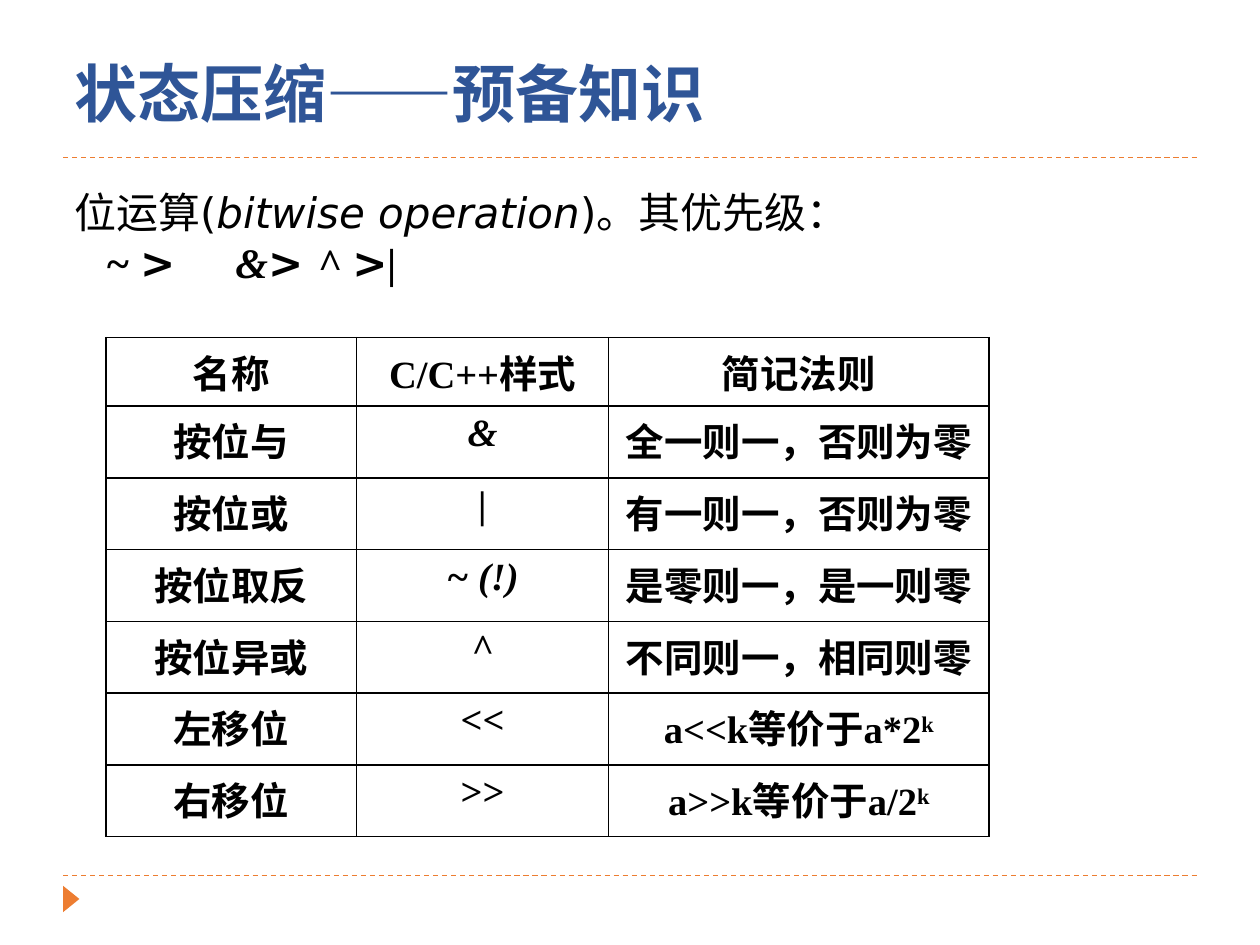
from lxml.etree import SubElement
from pptx import Presentation
from pptx.dml.color import RGBColor
from pptx.enum.dml import MSO_LINE
from pptx.enum.shapes import MSO_CONNECTOR, MSO_SHAPE
from pptx.enum.text import MSO_ANCHOR, PP_ALIGN
from pptx.oxml.ns import qn
from pptx.util import Inches, Pt

BLACK, BLUE, ORANGE = "000000", "2F5597", "ED7D31"
SERIF, SANS = "Times New Roman", "DejaVu Sans"
COLUMN_WIDTHS = (1.99, 2, 3.02)
HEADER_HEIGHT, ROW_HEIGHT = 0.54, 0.57
ROWS = [
    ("名称", "C/C++样式", "简记法则"),
    ("按位与", "&", "全一则一，否则为零"),
    ("按位或", "|", "有一则一，否则为零"),
    ("按位取反", "~ (!)", "是零则一，是一则零"),
    ("按位异或", "^", "不同则一，相同则零"),
    ("左移位", "<<", "a<<k等价于a*2^k"),
    ("右移位", ">>", "a>>k等价于a/2^k"),
]
ITALIC_SYMBOLS = {"&", "|", "~ (!)", "^"}


def color(value):
    """Turn a hex string into a colour."""
    return RGBColor.from_string(value)


def add_span(para, text, size, name, shade=BLACK, bold=False, italic=False):
    """Add one formatted run to a paragraph."""
    span = para.add_run()
    span.text = text
    font = span.font
    font.size, font.name, font.bold, font.italic = Pt(size), name, bold, italic
    font.color.rgb = color(shade)
    return span


def add_rule(page, left, top, width):
    """Draw a dashed horizontal rule."""
    rule = page.shapes.add_connector(
        MSO_CONNECTOR.STRAIGHT, Inches(left), Inches(top), Inches(left + width), Inches(top))
    rule.line.color.rgb = color(ORANGE)
    rule.line.width = Pt(0.75)
    rule.line.dash_style = MSO_LINE.DASH
    SubElement(rule._element.spPr, qn("a:effectLst"))


def add_marker(page, left, top, width, height):
    """Draw the triangle that points right in the footer."""
    marker = page.shapes.add_shape(
        MSO_SHAPE.ISOSCELES_TRIANGLE, Inches(left), Inches(top), Inches(width), Inches(height))
    marker.rotation = 90
    marker.shadow.inherit = False
    marker.fill.solid()
    marker.fill.fore_color.rgb = color(ORANGE)
    marker.line.fill.background()


def fill_title(page, left, top, width, height):
    """Place and fill the title placeholder."""
    box = page.shapes.title
    box.left, box.top, box.width, box.height = map(Inches, (left, top, width, height))
    box.text_frame.vertical_anchor = MSO_ANCHOR.BOTTOM
    para = box.text_frame.paragraphs[0]
    para.alignment = PP_ALIGN.LEFT
    para.line_spacing = 0.9
    add_span(para, "状态压缩——预备知识", 36, "Calibri", BLUE, bold=True)


def add_precedence(page, left, top, width, height):
    """Add the introduction and the order of the operators."""
    box = page.shapes.add_textbox(Inches(left), Inches(top), Inches(width), Inches(height))
    frame = box.text_frame
    frame.word_wrap = True
    intro = frame.paragraphs[0]
    add_span(intro, "位运算(", 24, SANS)
    add_span(intro, "bitwise operation", 24, SANS, italic=True)
    add_span(intro, ")。其优先级：", 24, SANS)

    order = frame.add_paragraph()
    properties = order._p.get_or_add_pPr()
    properties.set("marL", str(Inches(0.25)))
    tabs = SubElement(properties, qn("a:tabLst"))
    SubElement(tabs, qn("a:tab"), pos=str(Inches(1.03)), algn="l")
    for text in ("~ ", ">\t", "&", "> ", "^ ", ">", "|"):
        is_relation = text.startswith(">")
        add_span(order, text, 24, SANS if is_relation else SERIF,
                 bold=True, italic=not is_relation)


def add_borders(cell):
    """Outline a table cell in black."""
    properties = cell._tc.get_or_add_tcPr()
    for side in ("lnL", "lnR", "lnT", "lnB"):
        edge = SubElement(properties, qn(f"a:{side}"), w=str(Pt(1)))
        fill = SubElement(edge, qn("a:solidFill"))
        SubElement(fill, qn("a:srgbClr"), val=BLACK)


def fill_cell(cell, text):
    """Write centred text in a cell, raising what follows a power sign."""
    add_borders(cell)
    cell.fill.background()
    para = cell.text_frame.paragraphs[0]
    para.alignment = PP_ALIGN.CENTER
    base, power = text[:-2], text[-1]
    if text.endswith("^k"):
        add_span(para, base, 22, SERIF, bold=True)
        raised = add_span(para, power, 22, SERIF, bold=True)
        raised.font._element.set("baseline", "30000")
    else:
        add_span(para, text, 22, SERIF, bold=True, italic=text in ITALIC_SYMBOLS)


def add_operator_table(page, left, top):
    """Add the table of bitwise operators."""
    height = HEADER_HEIGHT + ROW_HEIGHT * (len(ROWS) - 1)
    frame = page.shapes.add_table(
        len(ROWS), len(COLUMN_WIDTHS), Inches(left), Inches(top),
        Inches(sum(COLUMN_WIDTHS)), Inches(height))
    table = frame.table
    table.first_row = table.horz_banding = False
    for column, width in zip(table.columns, COLUMN_WIDTHS):
        column.width = Inches(width)
    for index, (row, texts) in enumerate(zip(table.rows, ROWS)):
        row.height = Inches(ROW_HEIGHT if index else HEADER_HEIGHT)
        for cell, text in zip(row.cells, texts):
            fill_cell(cell, text)


def main():
    """Build the slide and save the deck."""
    deck = Presentation()
    deck.slide_width, deck.slide_height = Inches(10), Inches(7.5)
    page = deck.slides.add_slide(deck.slide_layouts[5])
    for top in (6.95, 1.25):
        add_rule(page, 0.5, top, 9)
    add_marker(page, 0.46, 7.07, 0.21, 0.13)
    fill_title(page, 0.49, 0.11, 9.02, 0.98)
    add_operator_table(page, 0.84, 2.68)
    add_precedence(page, 0.49, 1.43, 8.9, 0.91)
    deck.save("out.pptx")


if __name__ == "__main__":
    main()
